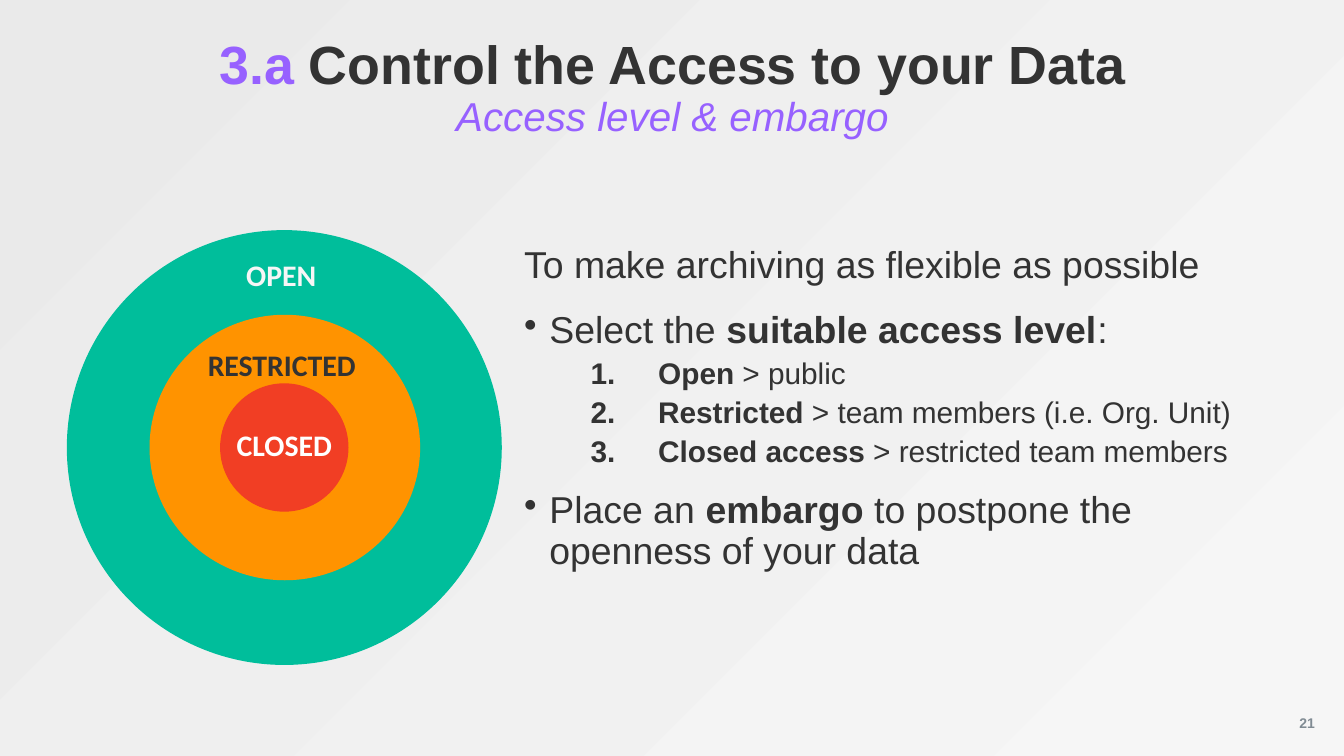
import pptx
import pptx.dml.color
import pptx.enum.shapes
import pptx.enum.text
import pptx.oxml.ns
import pptx.util
from lxml import etree

Inches, Pt = pptx.util.Inches, pptx.util.Pt
SHAPE = pptx.enum.shapes.MSO_SHAPE
MIDDLE = pptx.enum.text.MSO_ANCHOR.MIDDLE
CENTER = pptx.enum.text.PP_ALIGN.CENTER
DARK, PURPLE, PALE = "333333", "9761FF", "F6F6F6"
rgb = pptx.dml.color.RGBColor.from_string


def add_span(para, text, size, color=DARK, bold=False, italic=False, font="Arial"):
    span = para.add_run()
    span.text = text
    span.font.size = Pt(size)
    span.font.color.rgb = rgb(color)
    span.font.bold = bold
    span.font.italic = italic
    span.font.name = font


def add_box(left, top, width, height, align=None, anchor=None):
    """Add a wrapping text box and return its text frame."""
    box = page.shapes.add_textbox(Inches(left), Inches(top), Inches(width), Inches(height))
    frame = box.text_frame
    frame.word_wrap = True
    frame.vertical_anchor = anchor
    frame.paragraphs[0].alignment = align
    return frame


deck = pptx.Presentation()
deck.slide_width, deck.slide_height = Inches(13.33), Inches(7.5)
page = deck.slides.add_slide(deck.slide_layouts[6])
page.background.fill.solid()
page.background.fill.fore_color.rgb = rgb(PALE)

backdrop = page.shapes.add_shape(SHAPE.RECTANGLE, 0, 0, deck.slide_width, deck.slide_height)
backdrop.shadow.inherit = False
backdrop.line.fill.background()
backdrop.fill.gradient()
backdrop.fill.gradient_angle = 315
for stop, color in zip(backdrop.fill.gradient_stops, ("EAEAEA", PALE)):
    stop.color.rgb = rgb(color)

# Title and subtitle
title = add_box(0.92, 0.4, 11.5, 0.97, CENTER, MIDDLE).paragraphs[0]
title.line_spacing = 0.9
add_span(title, "3.a ", 38.4, PURPLE, bold=True)
add_span(title, "Control the Access to your Data", 38.4, bold=True)
title.add_line_break()
add_span(title, "Access level & embargo", 28.8, PURPLE, italic=True)

# Body: kind of paragraph, space before, space after, (text, bold) spans
body_rows = [
    ("plain", 0, 8, [("To make archiving as flexible as possible", False)]),
    ("bullet", 10, 0, [("Select the ", False), ("suitable access level", True), (":", False)]),
    ("number", 5, 0, [("Open", True), (" > public", False)]),
    ("number", 5, 0, [("Restricted ", True), ("> team members (i.e. Org. Unit)", False)]),
    ("number", 5, 0, [("Closed access ", True), ("> restricted team members", False)]),
    ("bullet", 16, 0, [("Place an ", False), ("embargo", True),
                       (" to postpone the openness of your data", False)]),
]
# Kind: text size, level, left margin, hanging indent, marker tag, marker attributes
formats = {
    "plain": (26.7, 0, 0, 0, "a:buNone", {}),
    "bullet": (26.7, 0, 0.25, -0.25, "a:buChar", {"char": "•"}),
    "number": (21.3, 1, 1.33, -0.67, "a:buAutoNum", {"type": "arabicPeriod"}),
}
body = add_box(5.1, 2.39, 7.32, 4.76)
for index, (kind, before, after, spans) in enumerate(body_rows):
    size, level, margin, indent, marker, attributes = formats[kind]
    para = body.add_paragraph() if index else body.paragraphs[0]
    para.level = level
    para.line_spacing = 0.9
    para.space_before, para.space_after = Pt(before), Pt(after)
    properties = para._p.get_or_add_pPr()
    properties.set("marL", str(Inches(margin)))
    properties.set("indent", str(Inches(indent)))
    etree.SubElement(properties, pptx.oxml.ns.qn(marker), attributes)
    for text, bold in spans:
        add_span(para, text, size, bold=bold)

# Nested access levels, outermost first
circles = [
    (0.67, 2.29, 4.3, 4.3, "00BE9B"),
    (1.49, 3.13, 2.67, 2.62, "FF9300"),
    (2.19, 3.81, 1.26, 1.26, "F13E24"),
]
for left, top, width, height, color in circles:
    circle = page.shapes.add_shape(
        SHAPE.OVAL, Inches(left), Inches(top), Inches(width), Inches(height))
    circle.shadow.inherit = False
    circle.fill.solid()
    circle.fill.fore_color.rgb = rgb(color)
    circle.line.color.rgb = rgb(color)
    circle.line.width = Pt(1)

labels = [
    ("OPEN", 2.11, 2.5, 1.36, PALE),
    ("RESTRICTED", 1.64, 3.39, 2.31, DARK),
    ("CLOSED", 2.06, 4.18, 1.52, "FFFFFF"),
]
for text, left, top, width, color in labels:
    label = add_box(left, top, width, 0.46, CENTER)
    add_span(label.paragraphs[0], text, 21.3, color, bold=True, font="Calibri")

page_number = add_box(12.75, 7.01, 0.43, 0.32, CENTER, MIDDLE)
add_span(page_number.paragraphs[0], "21", 10, "808B93", bold=True)

deck.save("out.pptx")
